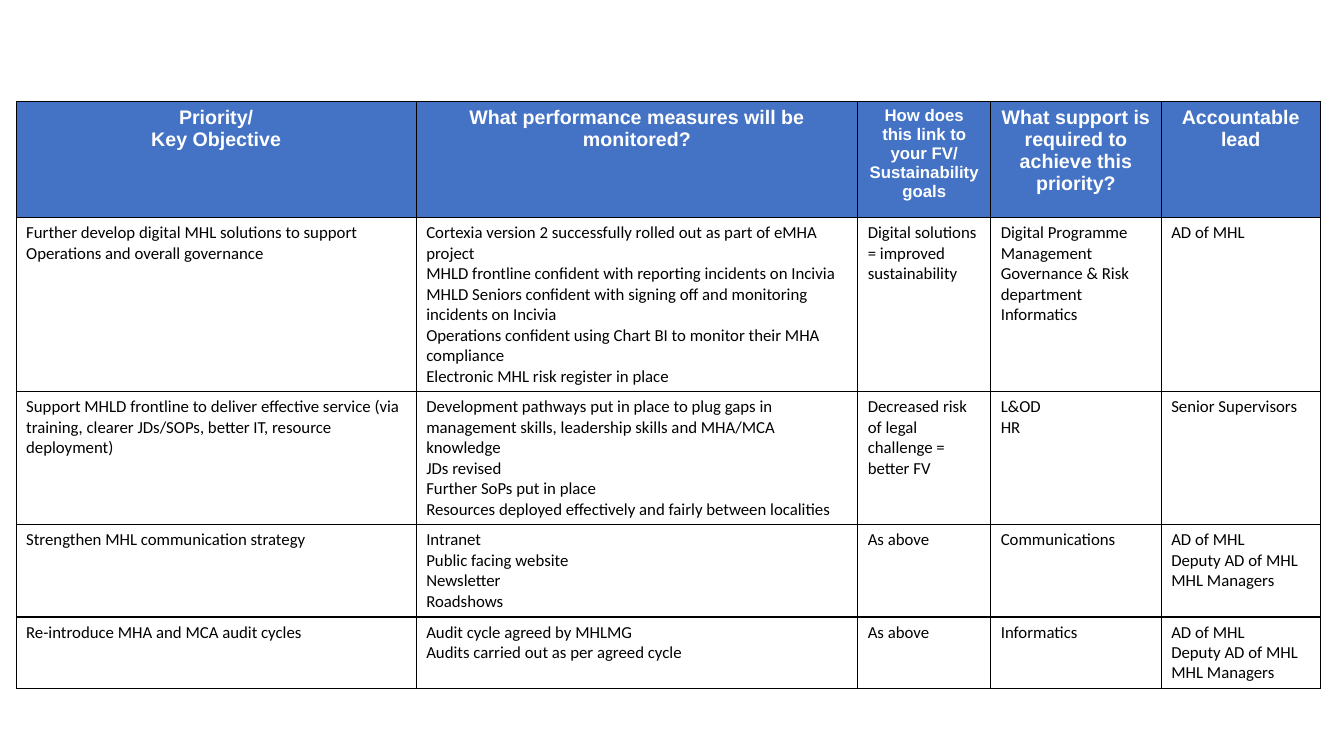
from pptx import Presentation
from pptx.dml.color import RGBColor
from pptx.enum import text
from pptx.oxml import parse_xml
from pptx.oxml.ns import nsdecls
from pptx.util import Pt

# Each cell is a list of paragraphs.
HEADS = [
    ["Priority/", "Key Objective"],
    ["What performance measures will be monitored?"],
    ["How does this link to your FV/", "Sustainability goals"],
    ["What support is required to achieve this priority?"],
    ["Accountable lead"],
]
LEADS = ["AD of MHL", "Deputy AD of MHL", "MHL Managers"]
GOALS = [
    [
        ["Further develop digital MHL solutions to support Operations and overall governance"],
        ["Cortexia version 2 successfully rolled out as part of eMHA project",
         "MHLD frontline confident with reporting incidents on Incivia "
         "MHLD Seniors confident with signing off and monitoring incidents on Incivia",
         "Operations confident using Chart BI to monitor their MHA compliance",
         "Electronic MHL risk register in place"],
        ["Digital solutions = improved sustainability"],
        ["Digital Programme Management", "Governance & Risk department", "Informatics"],
        ["AD of MHL"],
    ],
    [
        ["Support MHLD frontline to deliver effective service (via training, "
         "clearer JDs/SOPs, better IT, resource deployment)"],
        ["Development pathways put in place to plug gaps in management skills, "
         "leadership skills and MHA/MCA knowledge",
         "JDs revised",
         "Further SoPs put in place",
         "Resources deployed effectively and fairly between localities"],
        ["Decreased risk of legal challenge = better FV"],
        ["L&OD", "HR"],
        ["Senior Supervisors"],
    ],
    [
        ["Strengthen MHL communication strategy"],
        ["Intranet", "Public facing website", "Newsletter", "Roadshows"],
        ["As above"],
        ["Communications"],
        LEADS,
    ],
    [
        ["Re-introduce MHA and MCA audit cycles"],
        ["Audit cycle agreed by MHLMG", "Audits carried out as per agreed cycle"],
        ["As above"],
        ["Informatics"],
        LEADS,
    ],
]

THEME = {
    "head": RGBColor(0x44, 0x72, 0xC4),
    "light": RGBColor(0xFF, 0xFF, 0xFF),
    "dark": RGBColor(0, 0, 0),
    "line": "000000",
    "head font": "Arial",
    "body font": "Calibri",
    "head sizes": [14, 14, 12, 14, 14],
    "body size": 12,
}
LEFT, TOP = 11.5, 72.5
WIDTHS = [285.8, 315.4, 95, 121.8, 113.6]
HEIGHTS = [83, 124, 95, 66, 51]


def edge(cell):
    """Draw a 1 pt line on all four sides; call before filling the cell."""
    props = cell._tc.get_or_add_tcPr()
    for side in ("lnL", "lnR", "lnT", "lnB"):
        props.append(parse_xml(
            f'<a:{side} {nsdecls("a")} w="{Pt(1)}"><a:solidFill>'
            f'<a:srgbClr val="{THEME["line"]}"/></a:solidFill></a:{side}>'))


def write(cell, lines, font, size, ink, head):
    for i, line in enumerate(lines):
        para = cell.text_frame.paragraphs[0] if i == 0 else cell.text_frame.add_paragraph()
        para.alignment = text.PP_ALIGN.CENTER if head else text.PP_ALIGN.LEFT
        run = para.add_run()
        run.text = line
        run.font.name = font
        run.font.size = Pt(size)
        run.font.bold = head
        run.font.color.rgb = ink


def main():
    deck = Presentation()
    deck.slide_width, deck.slide_height = Pt(960), Pt(540)
    slide = deck.slides.add_slide(deck.slide_layouts[6])
    rows = [HEADS] + GOALS
    grid = slide.shapes.add_table(
        len(rows), len(WIDTHS), Pt(LEFT), Pt(TOP),
        Pt(sum(WIDTHS)), Pt(sum(HEIGHTS))).table
    grid.horz_banding = False
    for col, width in zip(grid.columns, WIDTHS):
        col.width = Pt(width)
    for row, height in zip(grid.rows, HEIGHTS):
        row.height = Pt(height)

    for r, row in enumerate(rows):
        head = r == 0
        for c, lines in enumerate(row):
            cell = grid.cell(r, c)
            edge(cell)
            if head:
                cell.fill.solid()
                cell.fill.fore_color.rgb = THEME["head"]
                write(cell, lines, THEME["head font"], THEME["head sizes"][c],
                      THEME["light"], head)
            else:
                cell.fill.background()
                write(cell, lines, THEME["body font"], THEME["body size"],
                      THEME["dark"], head)
    deck.save("out.pptx")


if __name__ == "__main__":
    main()
